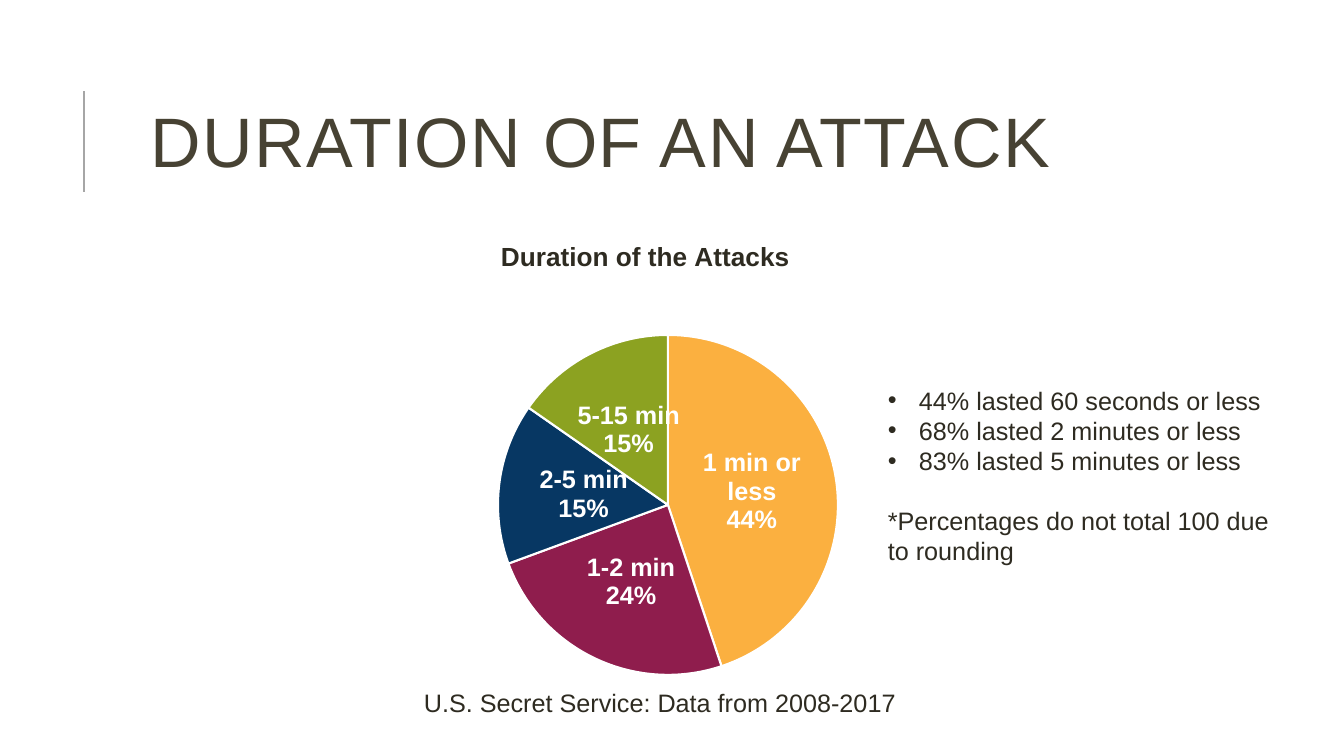
from dataclasses import dataclass

from lxml import etree
from pptx import Presentation
from pptx.chart.data import CategoryChartData
from pptx.dml.color import RGBColor
from pptx.enum.chart import XL_CHART_TYPE, XL_LABEL_POSITION
from pptx.enum.shapes import MSO_CONNECTOR
from pptx.enum.text import MSO_ANCHOR
from pptx.oxml import parse_xml
from pptx.oxml.ns import nsdecls, qn
from pptx.util import Emu, Pt

PIE = XL_CHART_TYPE.PIE
CENTER = XL_LABEL_POSITION.CENTER
STRAIGHT = MSO_CONNECTOR.STRAIGHT
MIDDLE = MSO_ANCHOR.MIDDLE


@dataclass(frozen=True)
class Theme:
    font: str = "Arial"
    heading: str = "474233"
    body: str = "2E2B21"
    rule: str = "A6A6A6"
    white: str = "FFFFFF"
    heading_size: float = 50
    body_size: float = 18
    chart_title_size: float = 18.7
    rule_width: float = 1.75
    slice_border: float = 1.5


THEME = Theme()
DURATIONS = [
    ("1 min or less", 0.44, "FBB040"),
    ("1-2 min", 0.24, "8F1D4D"),
    ("2-5 min", 0.15, "073763"),
    ("5-15 min", 0.15, "8CA221"),
]
FINDINGS = [
    "44% lasted 60 seconds or less",
    "68% lasted 2 minutes or less",
    "83% lasted 5 minutes or less",
]
ROUNDING_NOTE = "*Percentages do not total 100 due to rounding"


def px(length):
    return Emu(round(length * 914400 / 100.8))


def style_font(font, size, color, bold=False):
    font.name = THEME.font
    font.size = Pt(size)
    font.bold = bold
    font.color.rgb = RGBColor.from_string(color)


def add_text(slide, box, lines, size, color):
    shape = slide.shapes.add_textbox(*map(px, box))
    frame = shape.text_frame
    frame.word_wrap = True
    frame.text = "\n".join(lines)
    for paragraph in frame.paragraphs:
        for run in paragraph.runs:
            style_font(run.font, size, color)
    return frame


def add_heading(slide, box):
    left, top, width, height = box
    rule_x = px(left - 57)
    rule = slide.shapes.add_connector(
        STRAIGHT, rule_x, px(top + 127), rule_x, px(top + 26))
    rule.line.color.rgb = RGBColor.from_string(THEME.rule)
    rule.line.width = Pt(THEME.rule_width)
    etree.SubElement(rule._element.spPr, qn("a:effectLst"))

    frame = add_text(slide, box, ["DURATION OF AN ATTACK"],
                     THEME.heading_size, THEME.heading)
    frame.vertical_anchor = MIDDLE
    paragraph = frame.paragraphs[0]
    paragraph.line_spacing = 0.8
    paragraph.runs[0].font._element.set("spc", "100")


def manual_layout(**values):
    parts = "".join(f'<c:{name} val="{value}"/>' for name, value in values.items())
    return parse_xml(f'<c:layout {nsdecls("c")}><c:manualLayout>{parts}'
                     '</c:manualLayout></c:layout>')


def replace_layout(parent, layout, position):
    for old in parent.findall(qn("c:layout")):
        parent.remove(old)
    parent.insert(position, layout)


def add_duration_chart(slide, box):
    data = CategoryChartData(number_format="0%")
    data.categories = [name for name, _, _ in DURATIONS]
    data.add_series("Series 1", [value for _, value, _ in DURATIONS])
    chart = slide.shapes.add_chart(PIE, *map(px, box), data).chart
    style_font(chart.font, 10, THEME.body)
    chart.has_legend = False

    chart.has_title = True
    title = chart.chart_title
    title.include_in_layout = False
    title.text_frame.text = "Duration of the Attacks"
    style_font(title.text_frame.paragraphs[0].runs[0].font,
               THEME.chart_title_size, THEME.body, True)
    replace_layout(title._element,
                   manual_layout(xMode="edge", yMode="edge", x=0.27, y=0.05), 1)

    _, _, width, height = box
    diameter = 340
    replace_layout(
        chart._chartSpace.chart.plotArea,
        manual_layout(layoutTarget="inner", xMode="edge", yMode="edge",
                      x=round(170 / width, 4), y=round(125 / height, 4),
                      w=round(diameter / width, 4),
                      h=round(diameter / height, 4)), 0)

    plot = chart.plots[0]
    plot.vary_by_categories = True
    for index, (_, _, color) in enumerate(DURATIONS):
        slice_format = plot.series[0].points[index].format
        slice_format.fill.solid()
        slice_format.fill.fore_color.rgb = RGBColor.from_string(color)
        slice_format.line.color.rgb = RGBColor.from_string(THEME.white)
        slice_format.line.width = Pt(THEME.slice_border)

    labels = plot.series[0].data_labels
    labels.show_category_name = True
    labels.show_value = True
    labels.show_percentage = False
    labels.number_format = "0%"
    labels.number_format_is_linked = False
    labels.position = CENTER
    style_font(labels.font, THEME.body_size, THEME.white, True)
    separator = parse_xml(f'<c:separator {nsdecls("c")}>\n</c:separator>')
    labels._element.find(qn("c:showBubbleSize")).addnext(separator)


def add_findings(slide, box):
    frame = add_text(slide, box, FINDINGS + [ROUNDING_NOTE],
                     THEME.body_size, THEME.body)
    indent = px(31)
    for paragraph in frame.paragraphs[:len(FINDINGS)]:
        properties = paragraph._p.get_or_add_pPr()
        properties.set("marL", str(indent))
        properties.set("indent", str(-indent))
        etree.SubElement(properties, qn("a:buFont"), typeface=THEME.font)
        etree.SubElement(properties, qn("a:buChar"), char="•")
    frame.paragraphs[-1].space_before = Pt(21)


def add_data_credit(slide, box):
    add_text(slide, box, ["U.S. Secret Service: Data from 2008-2017"],
             THEME.body_size, THEME.body)


def main():
    presentation = Presentation()
    presentation.slide_width = px(1344)
    presentation.slide_height = px(756)
    slide = presentation.slides.add_slide(presentation.slide_layouts[6])
    add_heading(slide, (141, 65, 1072, 165))
    add_data_credit(slide, (414, 682, 672, 40))
    add_duration_chart(slide, (328, 210, 623, 480))
    add_findings(slide, (878, 380, 417, 224))
    presentation.save("out.pptx")


if __name__ == "__main__":
    main()
